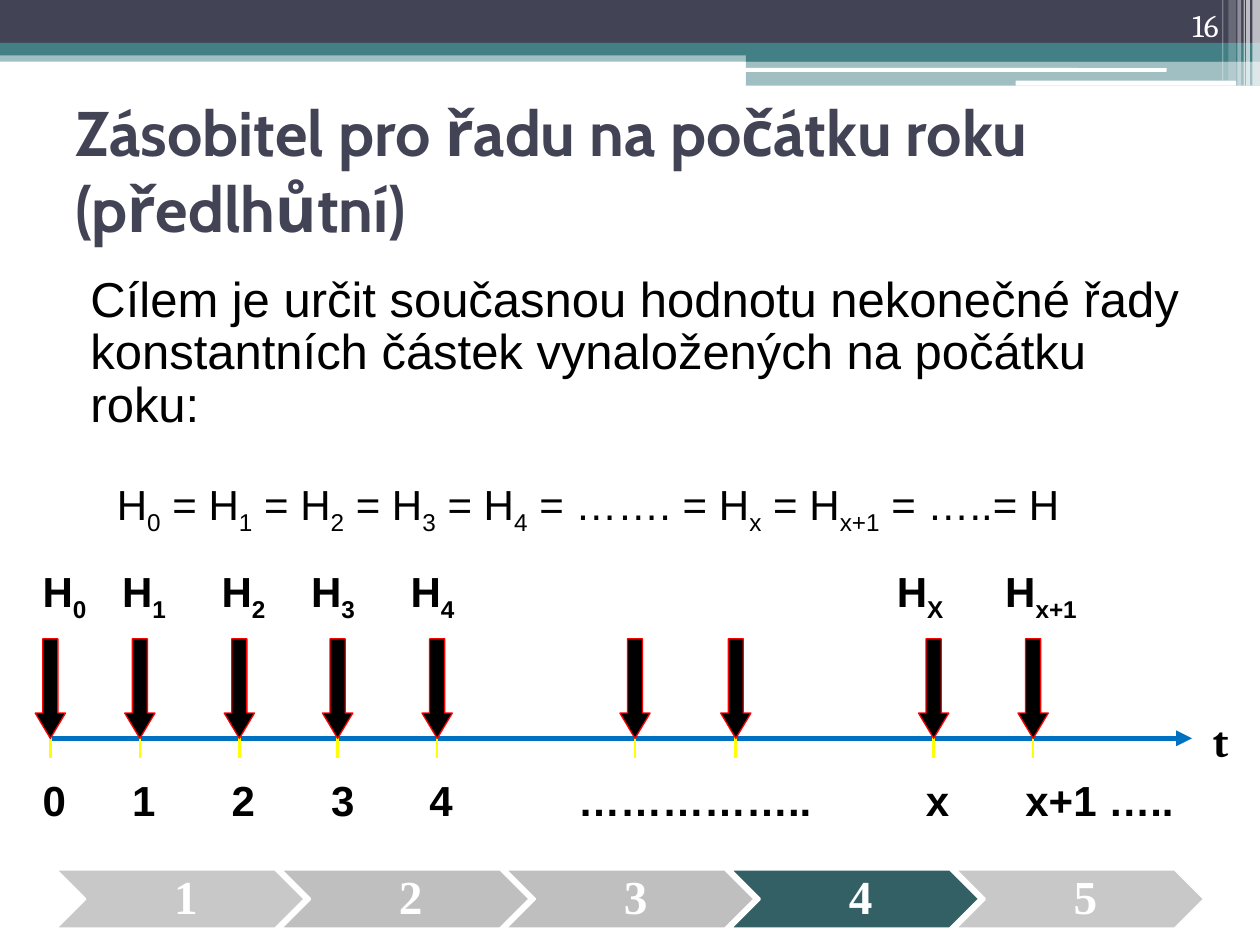
"""Build the slide on the present value of an endless series paid at the start of each year."""
import pptx
import pptx.dml.color
import pptx.enum.shapes
import pptx.enum.text
import pptx.util
from lxml import etree
from pptx.oxml.ns import qn

Inches = pptx.util.Inches
Pt = pptx.util.Pt
SHAPE = pptx.enum.shapes.MSO_SHAPE
ALIGN = pptx.enum.text.PP_ALIGN
ANCHOR = pptx.enum.text.MSO_ANCHOR

COLORS = {
    "navy": "424456",
    "teal": "438086",
    "dark_teal": "326065",
    "silver": "C8C8C8",
    "gray": "BFBFBF",
    "white": "FFFFFF",
    "black": "000000",
    "blue": "0070C0",
    "yellow": "FFFF00",
    "red": "FF0000",
}

BANDS = [
    (0, 0.4, 10, 0.09, "teal", 50),
    (0, 0, 10, 0.34, "navy", 100),
    (0, 0.34, 10, 0.1, "teal", 100),
    (5.92, 0.39, 4.08, 0.1, "teal", 100),
    (5.92, 0.48, 4.08, 0.2, "teal", 50),
]
PILLS = [(5.91, 0.54, 3.35, 0.03), (8.06, 0.64, 1.75, 0.04)]
STRIPES = [
    (9.94, 0.06, 0.68, 65),
    (9.89, 0.03, 0.68, 65),
    (9.87, 0.01, 0.68, 60),
    (9.82, 0.03, 0.68, 40),
    (9.75, 0.06, 0.64, 20),
    (9.7, 0.01, 0.64, 30),
]
STEP_FILLS = ["silver", "gray", "gray", "dark_teal", "silver"]
TICKS = [0.4, 1.11, 1.9, 2.68, 3.47, 5.04, 5.84, 7.41, 8.2]
TIMES = [
    (0.24, "0", 0.31),
    (0.95, "1", 0.31),
    (1.74, "2", 0.31),
    (2.53, "3", 0.31),
    (3.31, "4", 0.31),
    (4.49, "……………..", 2.13),
    (7.25, "x", 0.31),
    (8.04, "x+1 …..", 1.57),
]
PAYMENTS = [
    (0.24, "0", 0.71),
    (0.87, "1", 0.71),
    (1.66, "2", 0.71),
    (2.37, "3", 0.71),
    (3.16, "4", 0.71),
    (7.02, "X", 0.71),
    (7.88, "x+1", 0.94),
]
SERIES = "H|0| = H|1| = H|2| = H|3| = H|4| = ……. = H|x| = H|x+1| = …..= H"
AXIS_TOP = 5.86


def rgb(name):
    """Return the named colour."""
    return pptx.dml.color.RGBColor.from_string(COLORS[name])


def add_figure(page, kind, at, fill, line=None, width=0.75, opacity=100):
    """Add a filled preset shape, optionally outlined or translucent."""
    figure = page.shapes.add_shape(kind, *map(Inches, at))
    figure.shadow.inherit = False
    figure.fill.solid()
    figure.fill.fore_color.rgb = rgb(fill)
    if opacity < 100:
        color = figure.fill._xPr.find(qn("a:solidFill"))[0]
        etree.SubElement(color, qn("a:alpha")).set("val", str(opacity * 1000))
    if line:
        figure.line.color.rgb = rgb(line)
        figure.line.width = Pt(width)
    else:
        figure.line.fill.background()
    return figure


def add_line(page, start, end, color, width, arrow=False):
    """Add a straight line, optionally ending in a triangle."""
    line = page.shapes.add_connector(
        pptx.enum.shapes.MSO_CONNECTOR.STRAIGHT, *map(Inches, start + end))
    line.line.color.rgb = rgb(color)
    line.line.width = Pt(width)
    if arrow:
        etree.SubElement(line.line._get_or_add_ln(), qn("a:tailEnd")).set("type", "triangle")
    etree.SubElement(line._element.spPr, qn("a:effectLst"))


def add_text(page, at, text, size=24, font="Arial", color="black", bold=False,
             align=ALIGN.LEFT, anchor=ANCHOR.TOP, insets=(0.1, 0.05, 0.1, 0.05)):
    """Add a text box in which every second part between bars is a subscript."""
    box = page.shapes.add_textbox(*map(Inches, at))
    frame = box.text_frame
    frame.word_wrap = True
    frame.vertical_anchor = anchor
    (frame.margin_left, frame.margin_top,
     frame.margin_right, frame.margin_bottom) = map(Inches, insets)
    para = frame.paragraphs[0]
    para.alignment = align
    for index, part in enumerate(text.split("|")):
        if not part:
            continue
        span = para.add_run()
        span.text = part
        span.font.size = Pt(size)
        span.font.name = font
        span.font.bold = bold
        span.font.color.rgb = rgb(color)
        if index % 2:
            span.font._element.set("baseline", "-25000")
    return para


def add_header(page):
    """Add the bands, stripes and page number along the top."""
    for *at, fill, opacity in BANDS:
        add_figure(page, SHAPE.RECTANGLE, at, fill, opacity=opacity)
    for at in PILLS:
        add_figure(page, SHAPE.ROUNDED_RECTANGLE, at, "white")
    for left, width, height, opacity in STRIPES:
        add_figure(page, SHAPE.RECTANGLE, (left, 0, width, height), "white", opacity=opacity)
    add_text(page, (8.94, 0, 0.83, 0.4), "16", 18, "Cambria", "white",
             align=ALIGN.RIGHT, anchor=ANCHOR.BOTTOM)


def add_statement(page):
    """Add the title, the aim and the equation of the series."""
    add_text(page, (0.5, 0.76, 9, 1.17), "Zásobitel pro řadu na počátku roku (předlhůtní)",
             36, "Cabin", "navy", bold=True, anchor=ANCHOR.MIDDLE)
    aim = add_text(page, (0.5, 2.18, 9, 1.65),
                   "Cílem je určit současnou hodnotu nekonečné řady konstantních částek "
                   "vynaložených na počátku roku:", 28, insets=(0.1, 0, 0, 0))
    aim.line_spacing = 0.9
    aim.space_after = Pt(12)
    aim._p.get_or_add_pPr().set("marL", str(Inches(0.12)))
    add_text(page, (0.83, 3.75, 8.03, 0.5), SERIES)


def add_timeline(page):
    """Add the time axis with its ticks, payment arrows and labels."""
    add_line(page, (0.4, AXIS_TOP), (9.46, AXIS_TOP), "blue", 3, arrow=True)
    add_text(page, (9.53, 5.63, 0.31, 0.5), "t", font="Cambria", bold=True)
    for left in TICKS:
        add_line(page, (left, AXIS_TOP - 0.16), (left, AXIS_TOP + 0.16), "yellow", 1.5)
        arrow = add_figure(page, SHAPE.DOWN_ARROW, (left - 0.12, AXIS_TOP - 0.79, 0.24, 0.79),
                           "black", "red")
        arrow.adjustments[1] = 0.835
    for left, time, width in TIMES:
        add_text(page, (left, 6.1, width, 0.5), time, bold=True)
    for left, index, width in PAYMENTS:
        add_text(page, (left, 4.44, width, 0.5), f"H|{index}", bold=True)


def add_steps(page):
    """Add the row of numbered chevrons along the bottom."""
    for index, fill in enumerate(STEP_FILLS):
        left = 0.44 + index * 1.785
        add_figure(page, SHAPE.CHEVRON, (left, 6.9, 1.98, 0.47), fill, "white", 1.5)
        number = add_text(page, (left + 0.24, 6.9, 1.51, 0.47), str(index + 1), 27,
                          "Times New Roman", "white", True, ALIGN.CENTER, ANCHOR.MIDDLE,
                          (0.12, 0.04, 0.04, 0.04))
        number.line_spacing = 0.9


def main():
    """Build and save the deck."""
    deck = pptx.Presentation()
    deck.slide_width, deck.slide_height = Inches(10), Inches(7.5)
    page = deck.slides.add_slide(deck.slide_layouts[6])
    add_header(page)
    add_statement(page)
    add_steps(page)
    add_timeline(page)
    deck.save("out.pptx")


if __name__ == "__main__":
    main()
